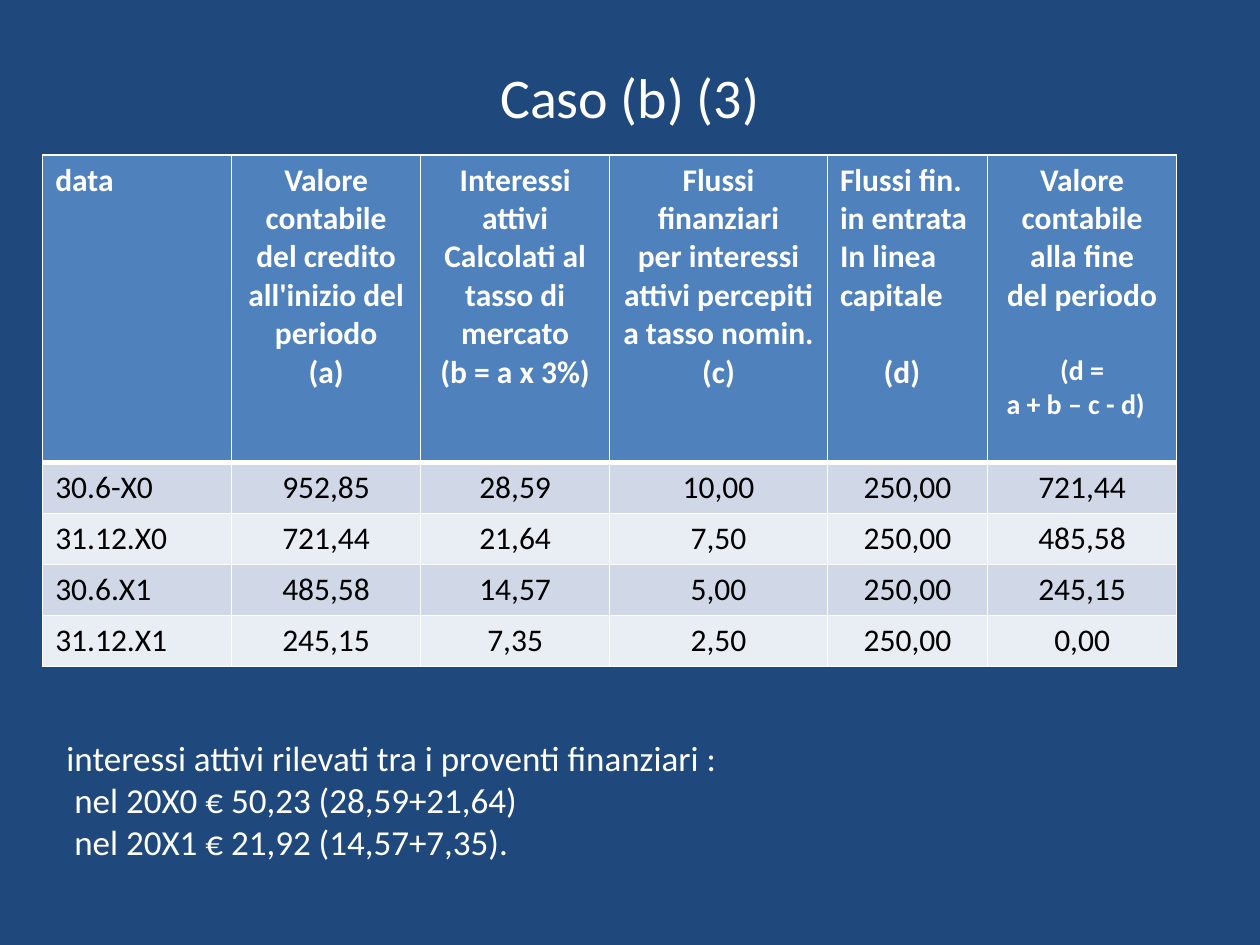
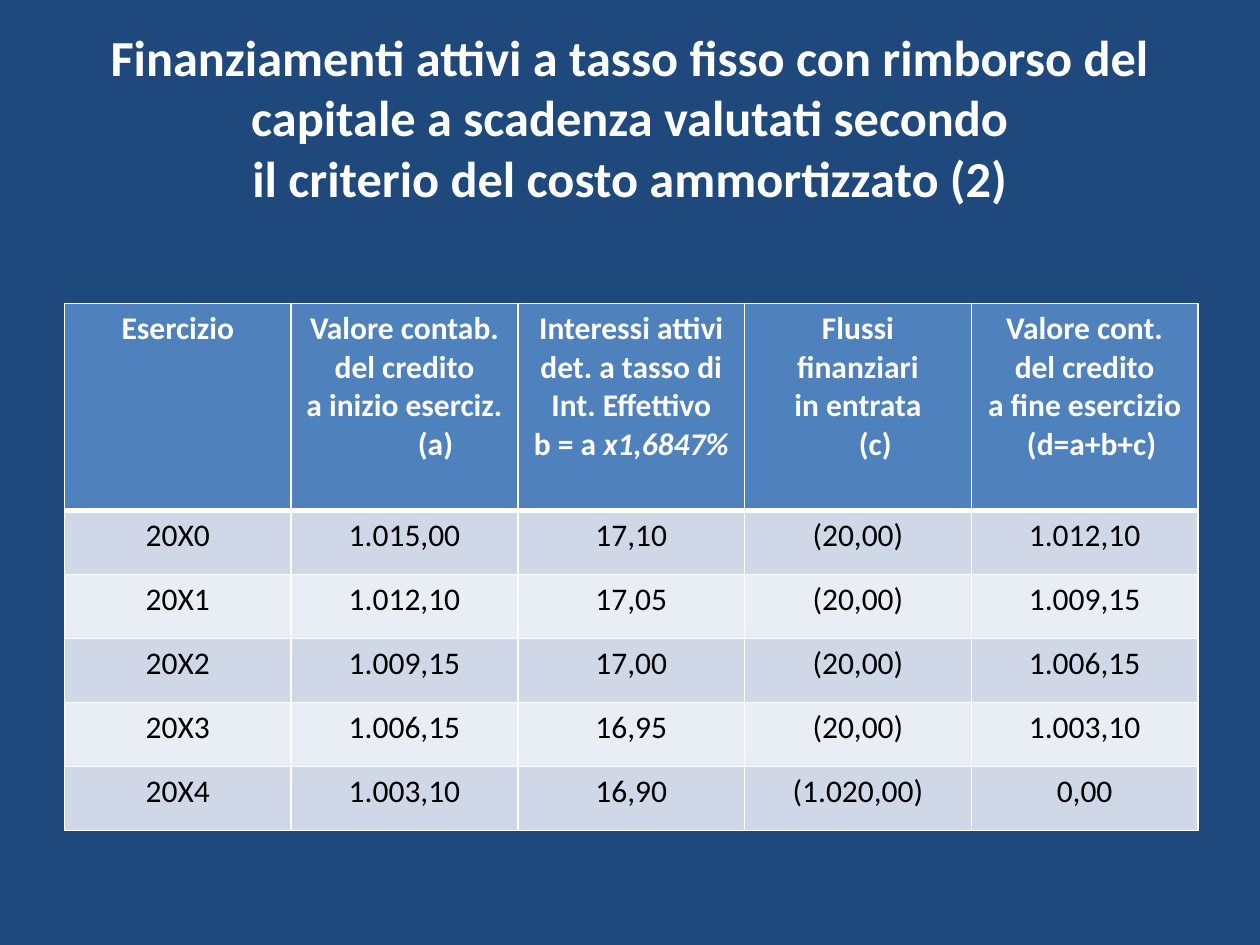
"""Build two slides on receivables measured at amortised cost."""
from dataclasses import dataclass, field

from pptx import Presentation
from pptx import util as u
from pptx.dml import color
from pptx.enum import text
from pptx.oxml import ns, xmlchemy

CENTER, LEFT = text.PP_ALIGN.CENTER, text.PP_ALIGN.LEFT


@dataclass(frozen=True)
class Theme:
    """Colours, font and type sizes shared by the slides."""
    ground: str = "1F497D"
    header: str = "4F81BD"
    bands: tuple = ("D0D8E8", "E9EDF4")
    light: str = "FFFFFF"
    dark: str = "000000"
    font: str = "Calibri"
    title: float = 32
    long_title: float = 28.8
    note: float = 20
    table: float = 18
    formula: float = 16
    rule: float = 1
    header_rule: float = 3


THEME = Theme()


@dataclass
class Line:
    """One paragraph with its indents in cm and spacing in points."""
    words: str
    italic_end: str = ""
    size: float = THEME.table
    before: float = 0
    left: float = 0
    right: float = 0


@dataclass
class Column:
    """A table column: heading lines, values, width in cm and alignments."""
    heading: list
    values: list
    width: float
    heading_align: int = CENTER
    value_align: int = CENTER


@dataclass
class Schedule:
    """An amortisation table with its place and row heights in cm."""
    left: float
    top: float
    heading_height: float
    row_height: float
    columns: list = field(default_factory=list)


def apply(target, formats):
    """Set every attribute named in formats on target."""
    for name, value in formats.items():
        setattr(target, name, value)


def paint(fill, shade):
    """Give a fill one solid colour."""
    fill.solid()
    fill.fore_color.rgb = color.RGBColor.from_string(shade)


def style(font, size, shade, bold=False):
    """Format a font in the shared typeface."""
    apply(font, {"name": THEME.font, "size": u.Pt(size), "bold": bold})
    font.color.rgb = color.RGBColor.from_string(shade)


def write_lines(frame, lines, align, shade, bold=False):
    """Write each line as a paragraph of the frame."""
    for number, line in enumerate(lines):
        paragraph = frame.add_paragraph() if number else frame.paragraphs[0]
        paragraph.alignment = align
        if line.before:
            paragraph.space_before = u.Pt(line.before)
        for side, indent in (("marL", line.left), ("marR", line.right)):
            if indent:
                paragraph._p.get_or_add_pPr().set(side, str(int(u.Cm(indent))))
        for words, italic in ((line.words, False), (line.italic_end, True)):
            if words:
                run = paragraph.add_run()
                run.text = words
                style(run.font, line.size, shade, bold)
                run.font.italic = italic


def rule_cell(cell, top, bottom):
    """Draw the four borders of a cell, widths in points."""
    widths = {"L": THEME.rule, "R": THEME.rule, "T": top, "B": bottom}
    properties = cell._tc.get_or_add_tcPr()
    for side, width in widths.items():
        border = xmlchemy.OxmlElement(f"a:ln{side}")
        border.set("w", str(int(u.Pt(width))))
        solid = xmlchemy.OxmlElement("a:solidFill")
        shade = xmlchemy.OxmlElement("a:srgbClr")
        shade.set("val", THEME.light)
        solid.append(shade)
        border.append(solid)
        properties.append(border)


def fill_cell(cell, lines, align, row):
    """Write, rule and colour a cell according to its row."""
    heading = row == 0
    rule_cell(cell, THEME.header_rule if row == 1 else THEME.rule,
              THEME.header_rule if heading else THEME.rule)
    paint(cell.fill, THEME.header if heading else THEME.bands[(row - 1) % 2])
    write_lines(cell.text_frame, lines, align,
                THEME.light if heading else THEME.dark, heading)


def add_schedule(slide, schedule):
    """Add an amortisation table to the slide."""
    columns = schedule.columns
    periods = len(columns[0].values)
    width = sum(column.width for column in columns)
    height = schedule.heading_height + periods * schedule.row_height
    grid = slide.shapes.add_table(
        periods + 1, len(columns), u.Cm(schedule.left), u.Cm(schedule.top),
        u.Cm(width), u.Cm(height)).table
    for row, band in enumerate(grid.rows):
        band.height = u.Cm(schedule.row_height if row else schedule.heading_height)
    for place, column in enumerate(columns):
        grid.columns[place].width = u.Cm(column.width)
        fill_cell(grid.cell(0, place), column.heading, column.heading_align, 0)
        for row, value in enumerate(column.values, 1):
            fill_cell(grid.cell(row, place), [Line(value)], column.value_align, row)


def add_titled_slide(deck, title_lines, size, height, bold=False):
    """Add a title-only slide, breaking the title between its lines."""
    slide = deck.slides.add_slide(deck.slide_layouts[5])
    title = slide.shapes.title
    apply(title, {"left": u.Cm(1.27), "top": u.Cm(0.76),
                  "width": u.Cm(22.86), "height": u.Cm(height)})
    apply(title.text_frame, {"word_wrap": True,
                             "auto_size": text.MSO_AUTO_SIZE.NONE,
                             "vertical_anchor": text.MSO_ANCHOR.MIDDLE})
    heading = title.text_frame.paragraphs[0]
    heading.alignment = CENTER
    for number, words in enumerate(title_lines):
        if number:
            heading.add_line_break()
        run = heading.add_run()
        run.text = words
        style(run.font, size, THEME.light, bold)
    return slide


def add_note(slide, lines):
    """Add the closing note under the table."""
    note = slide.shapes.add_textbox(u.Cm(1.09), u.Cm(14.73), u.Cm(22.81), u.Cm(2.82))
    note.text_frame.word_wrap = True
    write_lines(note.text_frame, lines, LEFT, THEME.light)


def headings(*words):
    """Turn plain strings into heading lines."""
    return [Line(word) for word in words]


def instalment_schedule():
    """Return the table of the loan repaid in instalments."""
    balances = ["952,85", "721,44", "485,58", "245,15", "0,00"]
    return Schedule(0.86, 3.12, 6.2, 1.03, [
        Column(headings("data"), ["30.6-X0", "31.12.X0", "30.6.X1", "31.12.X1"],
               3.81, LEFT, LEFT),
        Column(headings("Valore contabile", "del credito",
                        "all'inizio del periodo", "(a)"), balances[:-1], 3.81),
        Column(headings("Interessi attivi", "Calcolati al tasso di mercato",
                        "(b = a x 3%)"), ["28,59", "21,64", "14,57", "7,35"], 3.81),
        Column(headings("Flussi", "finanziari", "per interessi", "attivi percepiti",
                        "a tasso nomin.", "(c)"),
               ["10,00", "7,50", "5,00", "2,50"], 4.39),
        Column(headings("Flussi fin.", "in entrata", "In linea capitale")
               + [Line("(d)", before=22, left=0.88)], ["250,00"] * 4, 3.23, LEFT),
        Column(headings("Valore", "contabile", "alla fine", "del periodo")
               + [Line("(d =", size=THEME.formula, before=22),
                  Line("a + b – c - d)", size=THEME.formula, right=0.26)],
               balances[1:], 3.81),
    ])


def bullet_schedule():
    """Return the table of the loan repaid at maturity."""
    width = 4.57
    balances = ["1.015,00", "1.012,10", "1.009,15", "1.006,15", "1.003,10", "0,00"]
    return Schedule(1.3, 6.12, 4.17, 1.29, [
        Column(headings("Esercizio"), [f"20X{year}" for year in range(5)], width),
        Column(headings("Valore contab.", "del credito", "a inizio eserciz.")
               + [Line("(a)", left=1.25)], balances[:-1], width),
        Column(headings("Interessi attivi", "det. a tasso di", "Int. Effettivo")
               + [Line("b = a ", "x1,6847%")],
               ["17,10", "17,05", "17,00", "16,95", "16,90"], width),
        Column(headings("Flussi", "finanziari", "in entrata")
               + [Line("(c)", left=0.7)], ["(20,00)"] * 4 + ["(1.020,00)"], width),
        Column(headings("Valore cont.", "del credito", "a fine esercizio")
               + [Line("(d=a+b+c)", left=0.28)], balances[1:], width),
    ])


def main():
    """Build and save the presentation."""
    deck = Presentation()
    apply(deck, {"slide_width": u.Cm(25.4), "slide_height": u.Cm(19.05)})
    paint(deck.slide_master.background.fill, THEME.ground)

    instalments = add_titled_slide(deck, ["Caso (b) (3)"], THEME.title, 2.36)
    add_schedule(instalments, instalment_schedule())
    add_note(instalments, [
        Line("interessi attivi rilevati tra i proventi finanziari :", size=THEME.note),
        Line("nel 20X0 € 50,23 (28,59+21,64)", size=THEME.note, left=0.16),
        Line("nel 20X1 € 21,92 (14,57+7,35).", size=THEME.note, left=0.16),
    ])

    maturity = add_titled_slide(
        deck, ["Finanziamenti attivi a tasso fisso con rimborso del capitale "
               "a scadenza valutati secondo",
               "il criterio del costo ammortizzato (2)"],
        THEME.long_title, 3.18, bold=True)
    add_schedule(maturity, bullet_schedule())
    deck.save("out.pptx")


if __name__ == "__main__":
    main()
